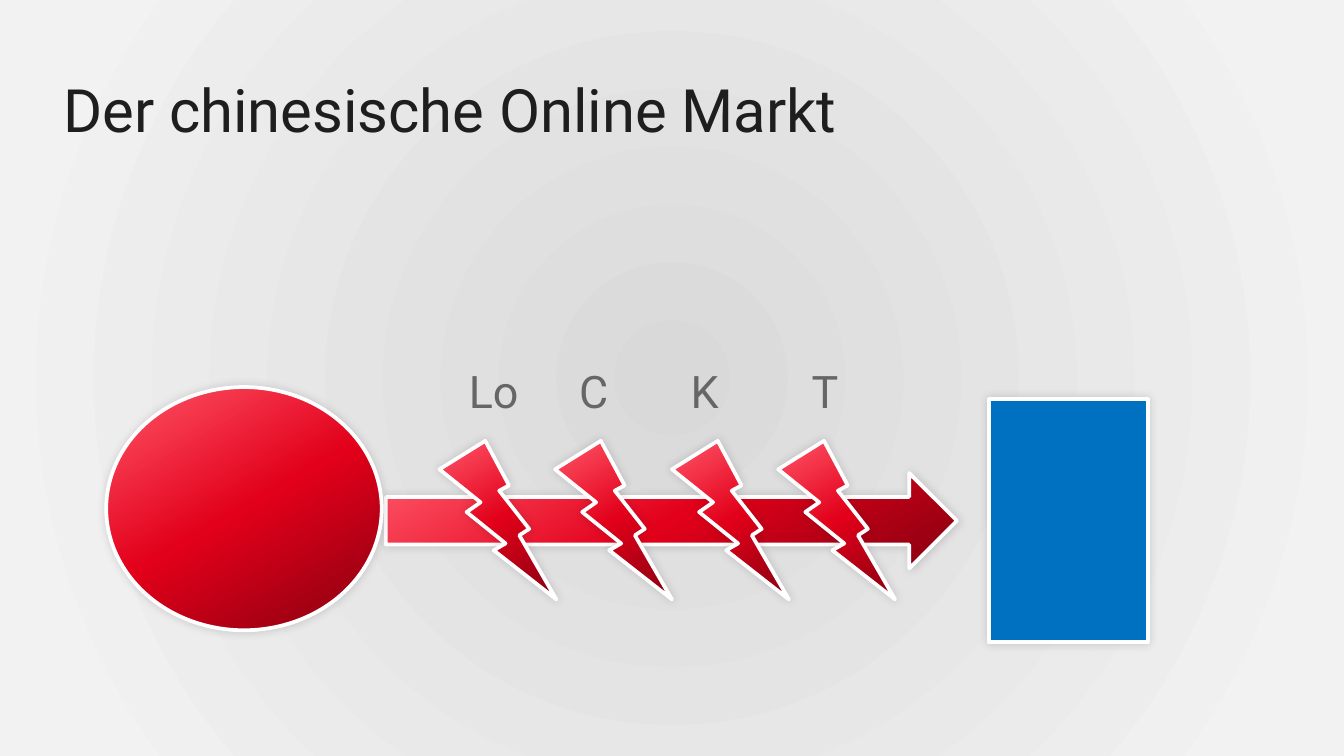
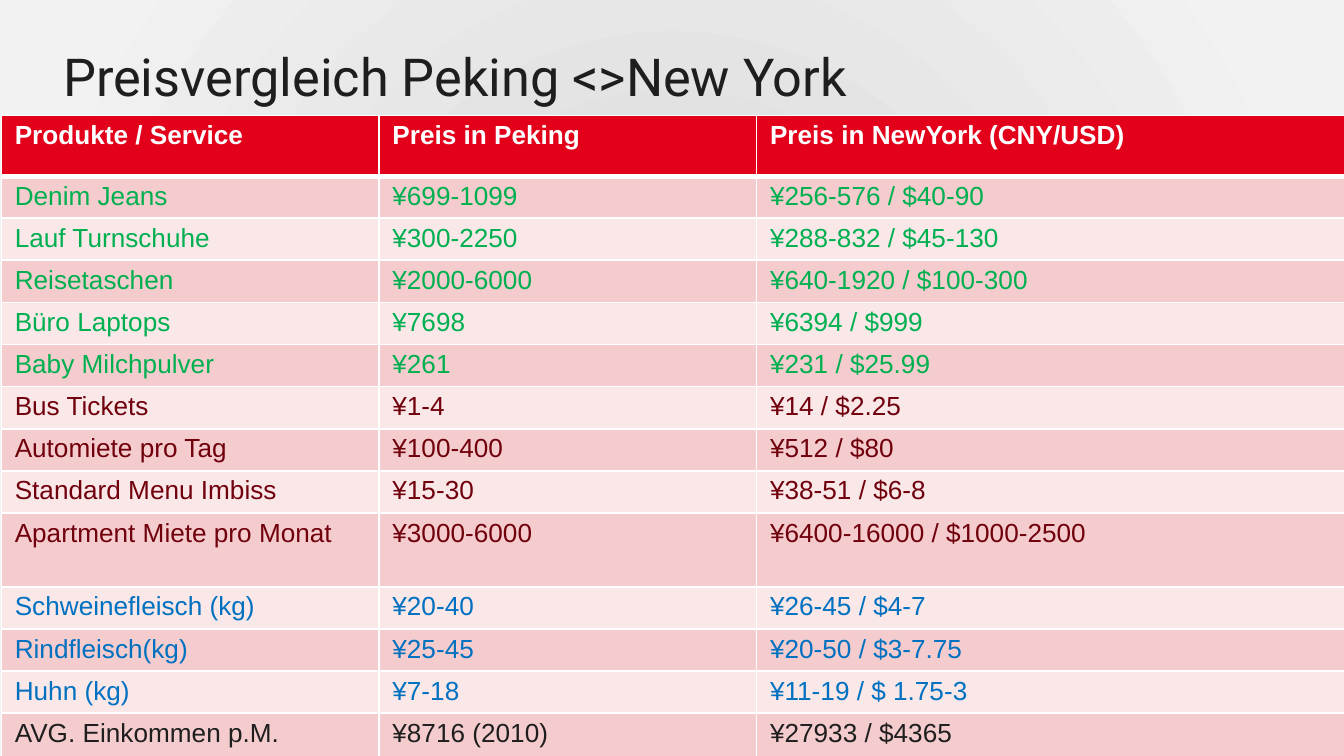
from typing import NamedTuple

from pptx import Presentation
from pptx.dml.color import RGBColor
from pptx.enum.shapes import MSO_SHAPE as Shape
from pptx.oxml import parse_xml
from pptx.oxml.ns import nsdecls, qn
from pptx.util import Inches, Pt

# Shared style
COLORS = {
    "ink": "1E1E1E", "label": "666666", "white": "FFFFFF", "black": "000000",
    "light_red": "FF5568", "red": "E2001A", "deep_red": "870010",
    "wine": "71000D", "green": "00B050", "blue": "0070C0",
    "band_dark": "F4CCCD", "band_light": "FAE7E8",
    "bg_inner": "D9D9D9", "bg_outer": "F2F2F2",
}
TITLE_FONT, TABLE_FONT = "Roboto", "Arial"
WIDTH = Inches(10)
HEIGHT = WIDTH * 9 // 16
UNIT = WIDTH / 100  # square grid cell: 100 columns across the slide
RED_STOPS = ((0, "light_red"), (50, "red"), (100, "deep_red"))
BG_STOPS = ((0, "bg_inner"), (90, "bg_outer"))
RADIAL = ('<a:path path="circle"><a:fillToRect l="50000" t="50000" '
          'r="50000" b="50000"/></a:path>')
DIAGONAL = '<a:lin ang="3600000" scaled="0"/>'


class Box(NamedTuple):
    """Left, top, width and height in grid columns and rows."""
    col: float
    row: float
    cols: float
    rows: float

    def emu(self) -> list[int]:
        return [units(v) for v in self]


class Figure(NamedTuple):
    kind: Shape
    box: Box
    fill: str = ""  # empty: red gradient


class Barrier(NamedTuple):
    label: str
    label_col: float
    label_cols: float
    bolt_col: float


class Group(NamedTuple):
    color: str
    rows: tuple


# Slide 1 content
FIGURES = (
    Figure(Shape.RECTANGLE, Box(73.6, 29.7, 11.8, 18.1), "blue"),
    Figure(Shape.RIGHT_ARROW, Box(28.7, 35.2, 42.5, 7.1)),
    Figure(Shape.OVAL, Box(7.9, 28.8, 20.5, 18.1)),
)
BARRIERS = (
    Barrier("Lo", 33.9, 6.7, 32.7),
    Barrier("C", 42.1, 3.5, 41.3),
    Barrier("K", 50.4, 3.5, 50),
    Barrier("T", 59.4, 3.5, 57.9),
)

# Slide 2 content
HEADER = ("Produkte / Service", "Preis in Peking", "Preis in NewYork (CNY/USD)")
GROUPS = (
    Group("green", (
        ("Denim Jeans", "¥699-1099", "¥256-576 / $40-90"),
        ("Lauf Turnschuhe", "¥300-2250", "¥288-832 / $45-130"),
        ("Reisetaschen", "¥2000-6000", "¥640-1920 / $100-300"),
        ("Büro Laptops", "¥7698", "¥6394 / $999"),
        ("Baby Milchpulver", "¥261", "¥231 / $25.99"))),
    Group("wine", (
        ("Bus Tickets", "¥1-4", "¥14 / $2.25"),
        ("Automiete pro Tag", "¥100-400", "¥512 / $80"),
        ("Standard Menu Imbiss", "¥15-30", "¥38-51 / $6-8"),
        ("Apartment Miete pro Monat", "¥3000-6000", "¥6400-16000 / $1000-2500"))),
    Group("blue", (
        ("Schweinefleisch (kg)", "¥20-40", "¥26-45 / $4-7"),
        ("Rindfleisch(kg)", "¥25-45", "¥20-50 / $3-7.75"),
        ("Huhn (kg)", "¥7-18", "¥11-19 / $ 1.75-3"))),
    Group("ink", (
        ("AVG. Einkommen p.M.", "¥8716 (2010)", "¥27933 / $4365"),)),
)
TABLE_COLS = (28.1, 28.1, 43.9)
ROW, HEADER_ROW, TALL_ROW = 3.09, 4.5, 5.5
TALL_ROWS = (9, 13)


def units(v: float) -> int:
    return round(v * UNIT)


def rgb(name: str) -> RGBColor:
    return RGBColor.from_string(COLORS[name])


def put_text(tf, text: str, *, size: float, color: str,
             font: str = TITLE_FONT, bold: bool = False) -> None:
    r = tf.paragraphs[0].add_run()
    r.text = text
    r.font.name, r.font.size, r.font.bold = font, Pt(size), bold
    r.font.color.rgb = rgb(color)


def add_text(slide, box: Box, text: str, *, inset: float | None = None, **fmt) -> None:
    tf = slide.shapes.add_textbox(*box.emu()).text_frame
    tf.word_wrap = True
    if inset is not None:
        tf.margin_left = tf.margin_right = units(inset)
        tf.margin_top = tf.margin_bottom = units(inset)
    put_text(tf, text, **fmt)


def set_gradient(fill, holder, stops: tuple, direction: str) -> None:
    fill.background()
    gs = "".join(f'<a:gs pos="{pos * 1000}"><a:srgbClr val="{COLORS[c]}"/></a:gs>'
                 for pos, c in stops)
    grad = parse_xml(f'<a:gradFill {nsdecls("a")} rotWithShape="1">'
                     f'<a:gsLst>{gs}</a:gsLst>{direction}</a:gradFill>')
    holder.replace(holder.find(qn("a:noFill")), grad)


def add_figure(slide, figure: Figure) -> None:
    s = slide.shapes.add_shape(figure.kind, *figure.box.emu())
    sp_pr = s.element.spPr
    if figure.fill:
        s.fill.solid()
        s.fill.fore_color.rgb = rgb(figure.fill)
    else:
        set_gradient(s.fill, sp_pr, RED_STOPS, DIAGONAL)
    s.line.color.rgb = rgb("white")
    s.line.width = Pt(2)
    # Soft glow-like shadow
    s.shadow.inherit = False
    sp_pr.find(qn("a:effectLst")).append(parse_xml(
        f'<a:outerShdw {nsdecls("a")} blurRad="{Pt(5)}" dist="0" dir="0">'
        f'<a:srgbClr val="{COLORS["black"]}"><a:alpha val="15000"/></a:srgbClr>'
        '</a:outerShdw>'))


def add_slide(prs, title: str, box: Box, size: float):
    slide = prs.slides.add_slide(prs.slide_layouts[6])
    fill = slide.background.fill
    fill.background()
    set_gradient(fill, slide.element.find(f'.//{qn("p:bgPr")}'), BG_STOPS, RADIAL)
    add_text(slide, box, title, inset=0.4, size=size, color="ink")
    return slide


def set_borders(cell, **widths: float) -> None:
    tc_pr = cell._tc.get_or_add_tcPr()
    for side, width in widths.items():
        tc_pr.append(parse_xml(
            f'<a:ln{side} {nsdecls("a")} w="{Pt(width)}"><a:solidFill>'
            f'<a:srgbClr val="{COLORS["white"]}"/></a:solidFill></a:ln{side}>'))


def add_price_table(slide) -> None:
    lines = [(HEADER, "white")]
    lines += [(row, group.color) for group in GROUPS for row in group.rows]
    heights = [HEADER_ROW] + [TALL_ROW if i in TALL_ROWS else ROW
                              for i in range(1, len(lines))]
    box = Box(0.1, 8.6, sum(TABLE_COLS), sum(heights))
    table = slide.shapes.add_table(len(lines), len(HEADER), *box.emu()).table
    for column, width in zip(table.columns, TABLE_COLS):
        column.width = units(width)
    for i, (texts, color) in enumerate(lines):
        table.rows[i].height = units(heights[i])
        band = "red" if i == 0 else "band_dark" if i % 2 else "band_light"
        for j, text in enumerate(texts):
            cell = table.cell(i, j)
            cell.margin_left = cell.margin_right = units(1)
            cell.margin_top = cell.margin_bottom = units(0.4)
            set_borders(cell, L=1, R=1, T=3 if i == 1 else 1, B=3 if i == 0 else 1)
            cell.fill.solid()
            cell.fill.fore_color.rgb = rgb(band)
            put_text(cell.text_frame, text, size=14, color=color,
                     font=TABLE_FONT, bold=i == 0)


def build_market(prs) -> None:
    slide = add_slide(prs, "Der chinesische Online Markt", Box(4.3, 5, 92.9, 11.3), 32)
    for figure in FIGURES:
        add_figure(slide, figure)
    for b in reversed(BARRIERS):
        add_figure(slide, Figure(Shape.LIGHTNING_BOLT, Box(b.bolt_col, 32.8, 8.7, 11.8)))
    for b in BARRIERS:
        add_text(slide, Box(b.label_col, 26.6, b.label_cols, 5), b.label,
                 size=24, color="label")


def build_prices(prs) -> None:
    slide = add_slide(prs, "Preisvergleich Peking <>New York", Box(4.3, 2.9, 92.1, 4.7), 28)
    add_price_table(slide)


def main() -> None:
    prs = Presentation()
    prs.slide_width, prs.slide_height = WIDTH, HEIGHT
    build_market(prs)
    build_prices(prs)
    prs.save("out.pptx")


if __name__ == "__main__":
    main()
